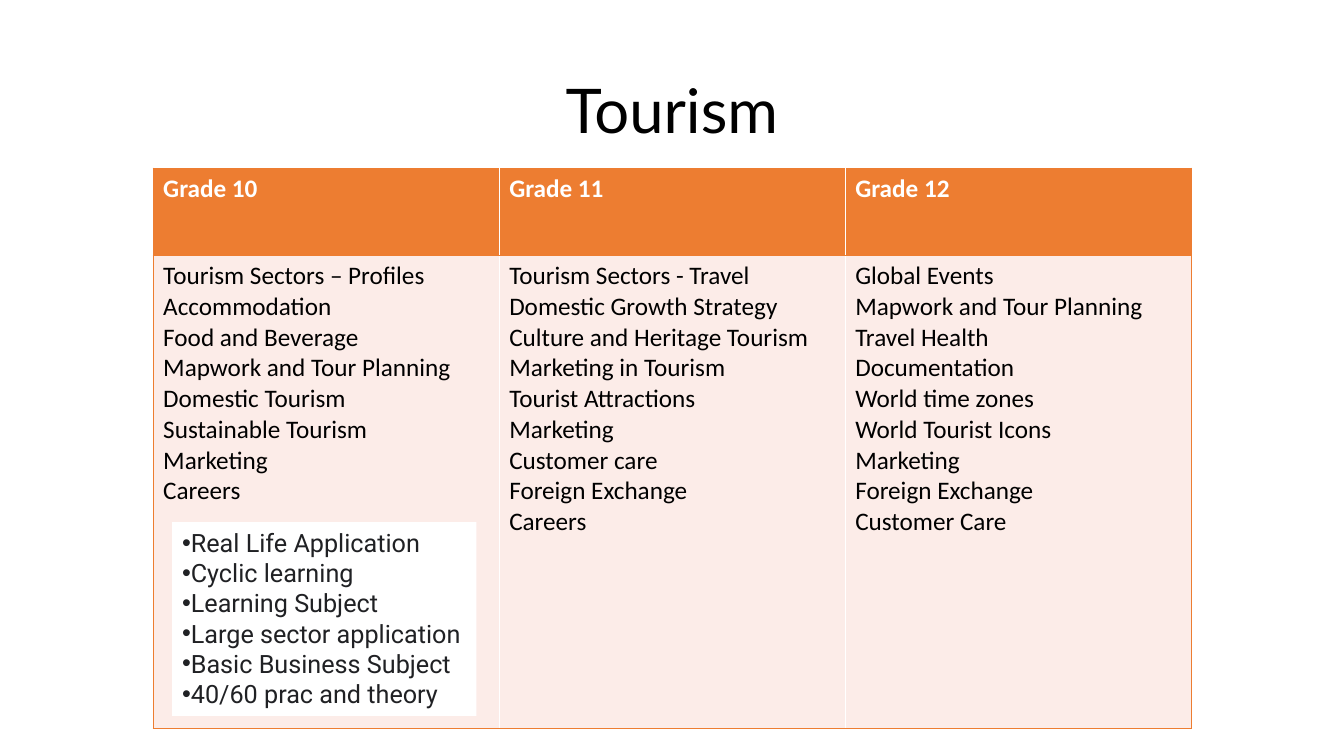
import dataclasses

import lxml.etree
import pptx
import pptx.dml.color
import pptx.enum.shapes
import pptx.enum.text
import pptx.oxml
import pptx.oxml.ns
import pptx.util

Cm = pptx.util.Cm
Anchor = pptx.enum.text.MSO_ANCHOR
Align = pptx.enum.text.PP_ALIGN


@dataclasses.dataclass(frozen=True)
class Theme:
    orange: str = "ED7D31"
    blush: str = "FCECE8"
    white: str = "FFFFFF"
    black: str = "000000"
    charcoal: str = "202124"
    title_font: str = "Lato"
    table_font: str = "Calibri"
    list_font: str = "Roboto"
    title_size: int = 44
    body_size: int = 18
    border_width: int = 1


GRADES = {
    "Grade 10": [
        "Tourism Sectors – Profiles", "Accommodation", "Food and Beverage",
        "Mapwork and Tour Planning", "Domestic Tourism", "Sustainable Tourism",
        "Marketing", "Careers",
    ],
    "Grade 11": [
        "Tourism Sectors - Travel", "Domestic Growth Strategy",
        "Culture and Heritage Tourism", "Marketing in Tourism",
        "Tourist Attractions", "Marketing", "Customer care",
        "Foreign Exchange", "Careers",
    ],
    "Grade 12": [
        "Global Events", "Mapwork and Tour Planning", "Travel Health",
        "Documentation", "World time zones", "World Tourist Icons",
        "Marketing", "Foreign Exchange", "Customer Care",
    ],
}

BENEFITS = [
    "Real Life Application", "Cyclic learning", "Learning Subject",
    "Large sector application", "Basic Business Subject", "40/60 prac and theory",
]


class PageBuilder:
    def __init__(self, page, theme):
        self.page = page
        self.theme = theme

    def fill(self, target, color):
        target.fill.solid()
        target.fill.fore_color.rgb = pptx.dml.color.RGBColor.from_string(color)

    def add_lines(self, frame, lines, font, size, color, bold=False, align=Align.LEFT):
        frame.word_wrap = True
        for index, line in enumerate(lines):
            para = frame.add_paragraph() if index else frame.paragraphs[0]
            para.alignment = align
            span = para.add_run()
            span.text = line
            span.font.name = font
            span.font.size = pptx.util.Pt(size)
            span.font.bold = bold
            span.font.color.rgb = pptx.dml.color.RGBColor.from_string(color)

    def title(self, text, left, top, width, height):
        box = self.page.shapes.add_textbox(Cm(left), Cm(top), Cm(width), Cm(height))
        frame = box.text_frame
        frame.vertical_anchor = Anchor.MIDDLE
        self.add_lines(frame, [text], self.theme.title_font, self.theme.title_size,
                       self.theme.black, align=Align.CENTER)
        frame.paragraphs[0].line_spacing = 0.9

    def border(self, cell, sides):
        properties = cell._tc.get_or_add_tcPr()
        for index, side in enumerate(sides):
            line = pptx.oxml.parse_xml(
                f'<a:ln{side} {pptx.oxml.ns.nsdecls("a")} '
                f'w="{pptx.util.Pt(self.theme.border_width)}"><a:solidFill>'
                f'<a:srgbClr val="{self.theme.orange}"/></a:solidFill></a:ln{side}>')
            properties.insert(index, line)

    def table(self, columns, left, top, column_width, row_heights):
        count = len(columns)
        frame = self.page.shapes.add_table(
            len(row_heights), count, Cm(left), Cm(top),
            Cm(column_width * count), Cm(sum(row_heights)))
        grid = frame.table
        for row, height in zip(grid.rows, row_heights):
            row.height = Cm(height)
        for index, (heading, topics) in enumerate(columns.items()):
            grid.columns[index].width = Cm(column_width)
            header, body = grid.cell(0, index), grid.cell(1, index)
            sides = "L" * (index == 0) + "R" * (index == count - 1) + "TB"
            for cell, color in ((header, self.theme.orange), (body, self.theme.blush)):
                self.fill(cell, color)
                self.border(cell, sides)
            self.add_lines(header.text_frame, [heading], self.theme.table_font,
                           self.theme.body_size, self.theme.white, bold=True)
            self.add_lines(body.text_frame, topics, self.theme.table_font,
                           self.theme.body_size, self.theme.black)

    def bullet_box(self, lines, left, top, width, height):
        box = self.page.shapes.add_shape(
            pptx.enum.shapes.MSO_SHAPE.RECTANGLE,
            Cm(left), Cm(top), Cm(width), Cm(height))
        box.shadow.inherit = False
        self.fill(box, self.theme.white)
        box.line.fill.background()
        frame = box.text_frame
        frame.vertical_anchor = Anchor.TOP
        self.add_lines(frame, lines, self.theme.list_font, self.theme.body_size,
                       self.theme.charcoal)
        frame.auto_size = pptx.enum.text.MSO_AUTO_SIZE.SHAPE_TO_FIT_TEXT
        for para in frame.paragraphs:
            properties = para._p.get_or_add_pPr()
            for tag, name, value in (("a:buFont", "typeface", "Arial"),
                                     ("a:buChar", "char", "•")):
                mark = lxml.etree.SubElement(properties, pptx.oxml.ns.qn(tag))
                mark.set(name, value)


def main():
    deck = pptx.Presentation()
    deck.slide_width, deck.slide_height = Cm(33.87), Cm(19.05)
    page = deck.slides.add_slide(deck.slide_layouts[6])
    builder = PageBuilder(page, Theme())
    builder.title("Tourism", 2.33, 1.01, 29.21, 3.68)
    builder.table(GRADES, 3.86, 4.24, 8.72, [2.2, 11.91])
    builder.bullet_box(BENEFITS, 4.34, 13.16, 7.67, 4.88)
    deck.save("out.pptx")


if __name__ == "__main__":
    main()
